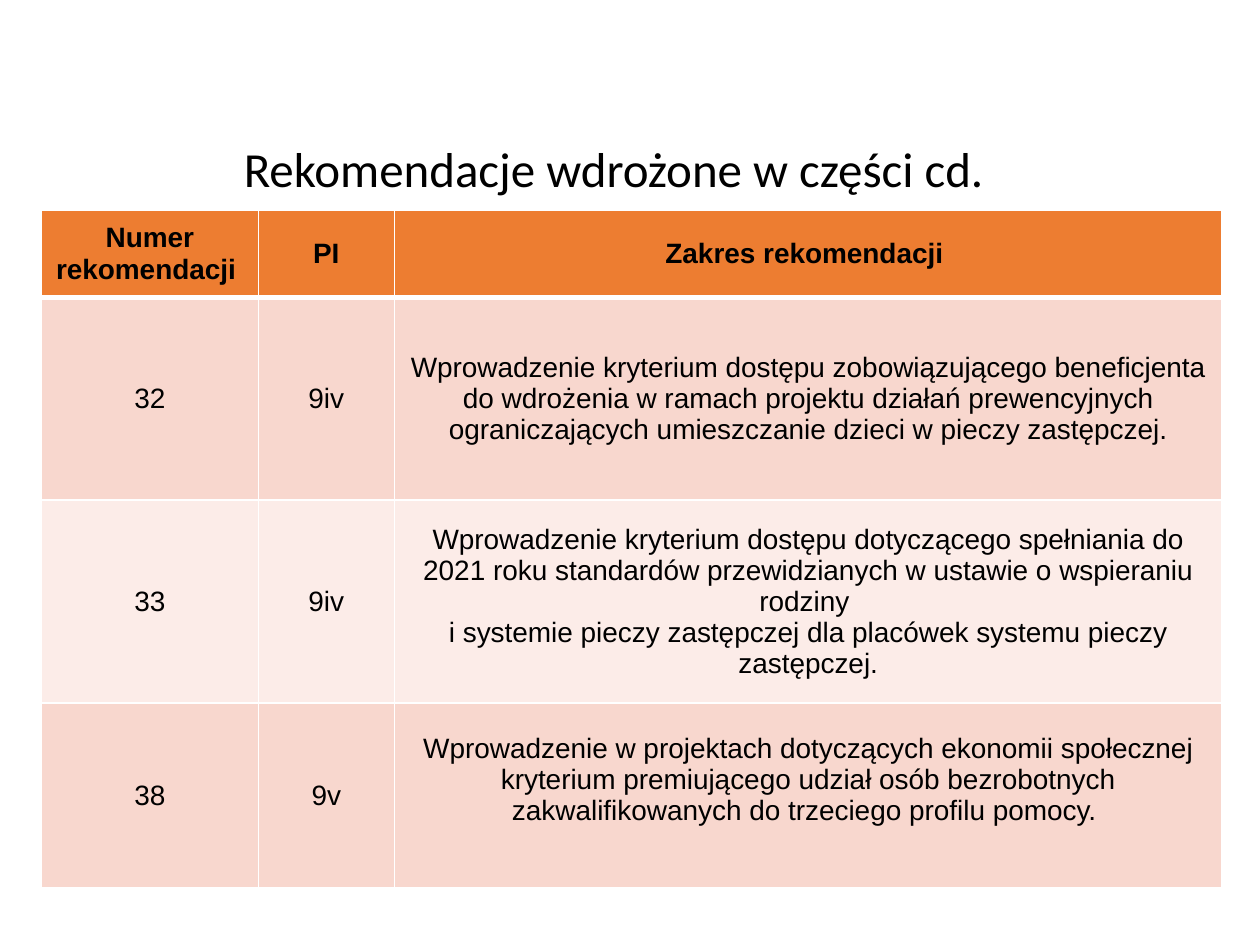
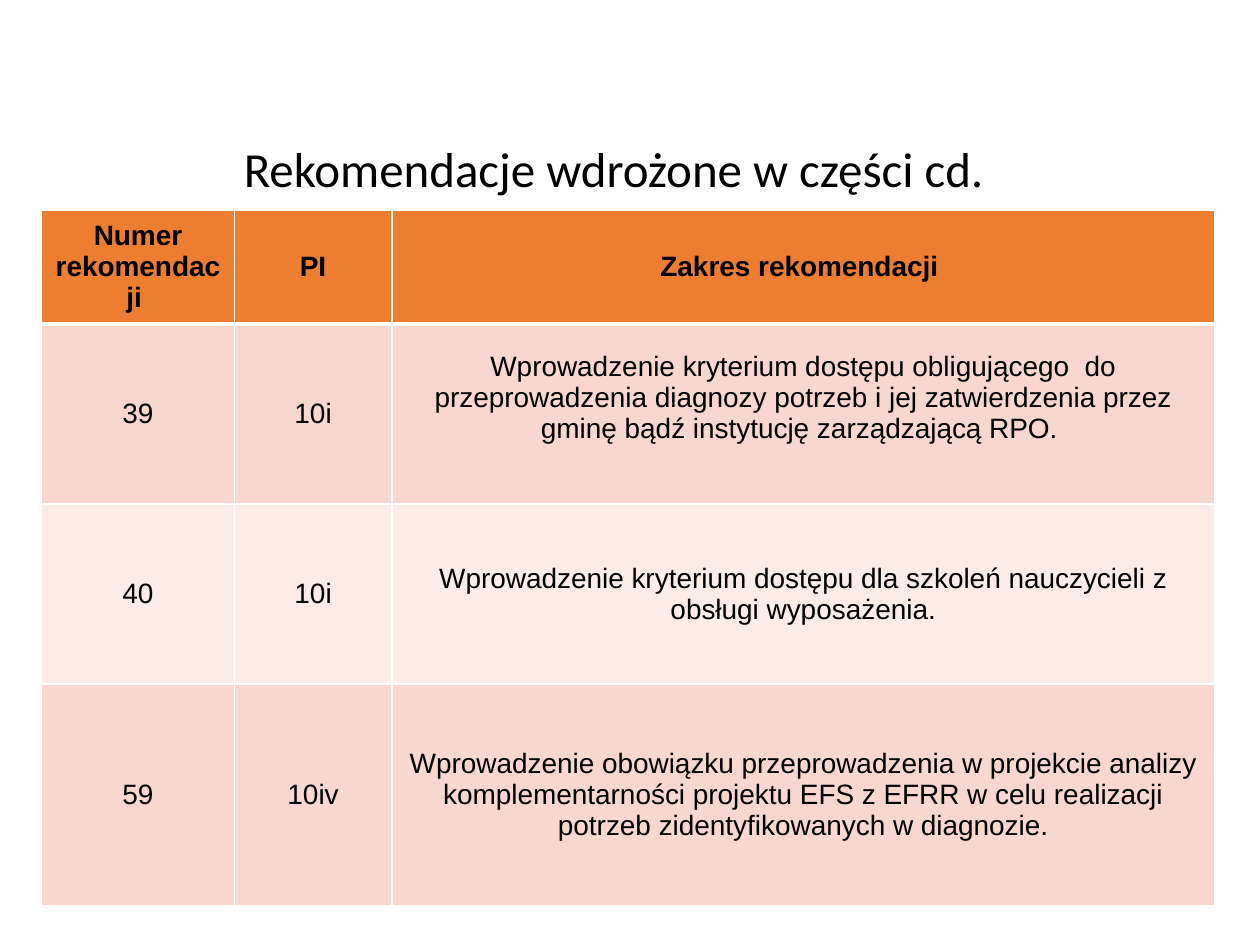
from dataclasses import dataclass

from lxml.etree import SubElement
from pptx import Presentation
from pptx.dml.color import RGBColor as Rgb
from pptx.enum.text import MSO_ANCHOR as Anchor, PP_ALIGN as Align
from pptx.oxml.ns import qn
from pptx.util import Inches, Pt


@dataclass(frozen=True)
class Theme:
    """Colours, fonts, type sizes and line widths of the deck."""
    ink: str = "000000"
    rule: str = "FFFFFF"
    header: str = "ED7D31"
    bands: tuple = ("F8D7CE", "FCECE8")
    title_font: str = "Calibri"
    table_font: str = "Arial"
    title_size: int = 28
    table_size: int = 16
    thin: int = 1
    thick: int = 3


THEME = Theme()
TITLE = "Rekomendacje wdrożone w części cd."
TITLE_BOX = (0.43, 1.05, 8.88, 0.62)
TABLE_CORNER = (0.33, 1.67)
HEADINGS = ("Numer rekomendacji ", "PI", "Zakres rekomendacji ")
RAISED_MARGIN = 0.3

PAGES = (
    {
        "columns": (1.72, 1.08, 6.57),
        "heights": (0.69, 1.61, 1.61, 1.47),
        "raised": "38",
        "rows": (
            ("32", "9iv",
             "Wprowadzenie kryterium dostępu zobowiązującego beneficjenta "
             "do wdrożenia w ramach projektu działań prewencyjnych "
             "ograniczających umieszczanie dzieci w pieczy zastępczej."),
            ("33", "9iv",
             "Wprowadzenie kryterium dostępu dotyczącego spełniania do 2021 roku "
             "standardów przewidzianych w ustawie o wspieraniu rodziny \n"
             "i systemie pieczy zastępczej dla placówek systemu pieczy zastępczej."),
            ("38", "9v",
             "Wprowadzenie w projektach dotyczących ekonomii społecznej "
             "kryterium premiującego udział osób bezrobotnych "
             "zakwalifikowanych do trzeciego profilu pomocy. "),
        ),
    },
    {
        "columns": (1.53, 1.25, 6.53),
        "heights": (0.9, 1.43, 1.43, 1.76),
        "raised": "39",
        "rows": (
            ("39", "10i",
             "Wprowadzenie kryterium dostępu obligującego  do "
             "przeprowadzenia diagnozy potrzeb i jej zatwierdzenia przez "
             "gminę bądź instytucję zarządzającą RPO. "),
            ("40", "10i",
             "Wprowadzenie kryterium dostępu dla szkoleń nauczycieli z "
             "obsługi wyposażenia."),
            ("59", "10iv",
             "Wprowadzenie obowiązku przeprowadzenia w projekcie analizy "
             "komplementarności projektu EFS z EFRR w celu realizacji "
             "potrzeb zidentyfikowanych w diagnozie."),
        ),
    },
)


def write(para, text, font, size, bold=False):
    """Fill a centred paragraph with text in one font."""
    para.text = text
    para.alignment = Align.CENTER
    para.font.name = font
    para.font.size = Pt(size)
    para.font.bold = bold
    para.font.color.rgb = Rgb.from_string(THEME.ink)


def add_title(page, box):
    """Place the shared title in the given box."""
    frame = page.shapes.add_textbox(*map(Inches, box)).text_frame
    frame.word_wrap = True
    frame.vertical_anchor = Anchor.MIDDLE
    para = frame.paragraphs[0]
    write(para, TITLE, THEME.title_font, THEME.title_size)
    para.line_spacing = 0.9


def add_borders(cell, top, bottom):
    """Rule the four sides of a cell."""
    properties = cell._tc.get_or_add_tcPr()
    sides = {"L": THEME.thin, "R": THEME.thin, "T": top, "B": bottom}
    for side, width in sides.items():
        line = SubElement(properties, qn(f"a:ln{side}"), w=str(Pt(width)))
        fill = SubElement(line, qn("a:solidFill"))
        SubElement(fill, qn("a:srgbClr"), val=THEME.rule)


def style_cell(cell, text, row):
    """Write a cell and dress it according to its row."""
    cell.vertical_anchor = Anchor.MIDDLE
    write(cell.text_frame.paragraphs[0], text,
          THEME.table_font, THEME.table_size, bold=row == 0)
    add_borders(cell,
                THEME.thick if row == 1 else THEME.thin,
                THEME.thick if row == 0 else THEME.thin)
    colour = THEME.bands[(row - 1) % 2] if row else THEME.header
    cell.fill.solid()
    cell.fill.fore_color.rgb = Rgb.from_string(colour)


def add_recommendations(page, corner, columns, heights, rows, raised):
    """Place the table of recommendations at the given corner."""
    table = page.shapes.add_table(
        len(heights), len(columns), *map(Inches, corner),
        Inches(sum(columns)), Inches(sum(heights))).table
    for column, width in zip(table.columns, columns):
        column.width = Inches(width)
    for index, (height, texts) in enumerate(zip(heights, (HEADINGS, *rows))):
        table.rows[index].height = Inches(height)
        for cell, text in zip(table.rows[index].cells, texts):
            style_cell(cell, text, index)
        if texts[0] == raised:
            table.cell(index, 2).margin_bottom = Inches(RAISED_MARGIN)


def main():
    """Build and save the deck."""
    deck = Presentation()
    deck.slide_width, deck.slide_height = Inches(10), Inches(7.5)
    for content in PAGES:
        page = deck.slides.add_slide(deck.slide_layouts[6])
        add_title(page, TITLE_BOX)
        add_recommendations(page, TABLE_CORNER, **content)
    deck.save("out.pptx")


if __name__ == "__main__":
    main()
